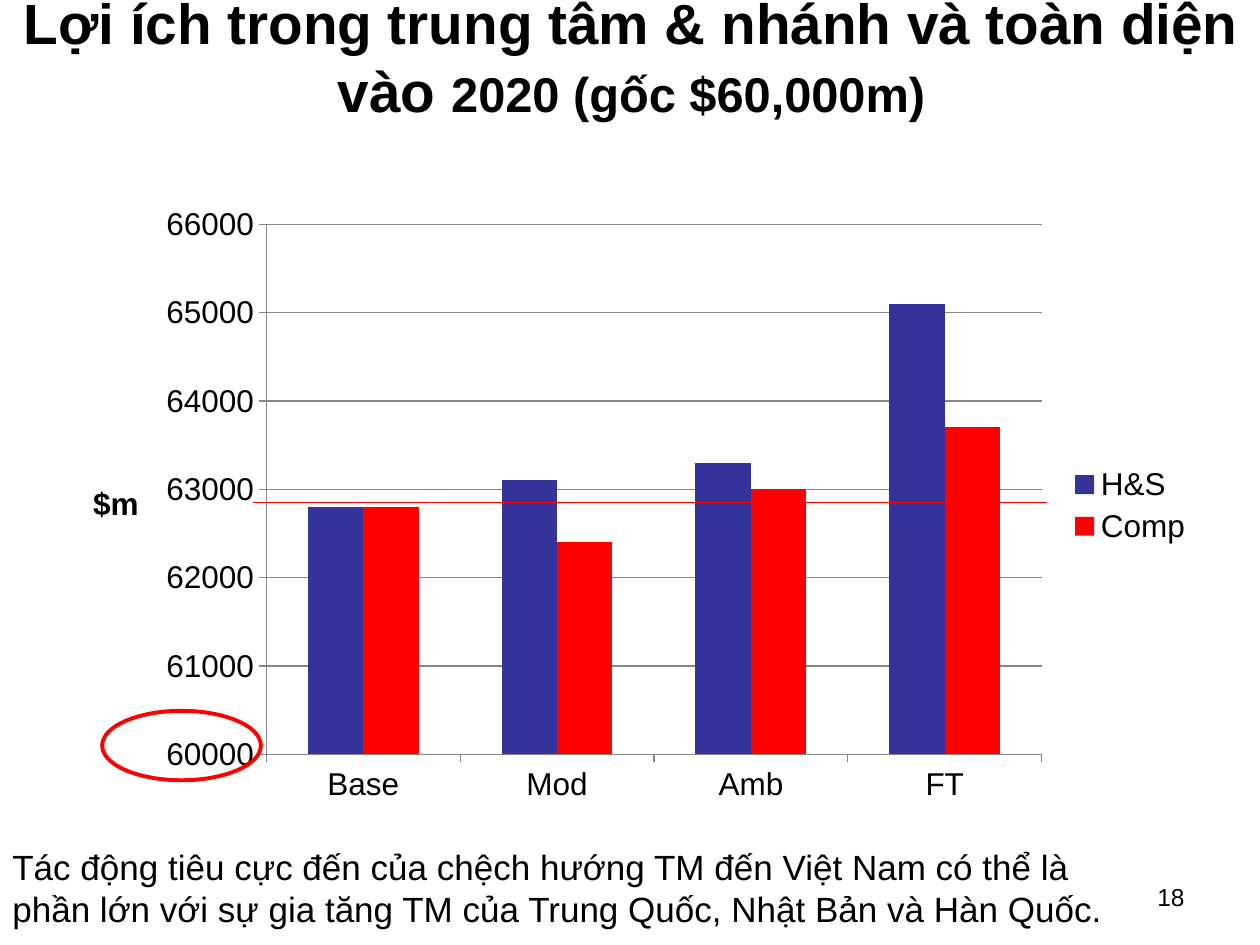
from lxml.etree import SubElement
from pptx import Presentation
from pptx.chart.data import CategoryChartData
from pptx.dml.color import RGBColor
from pptx.enum.chart import XL_CHART_TYPE as ChartType, XL_LEGEND_POSITION as LegendPosition
from pptx.enum.chart import XL_TICK_MARK as TickMark
from pptx.enum.shapes import MSO_CONNECTOR as Connector, MSO_SHAPE as Shape
from pptx.enum.text import PP_ALIGN as Align
from pptx.oxml import parse_xml
from pptx.oxml.ns import qn
from pptx.util import Cm, Pt

# Content
FONT = "Arial"
BLACK, RED, BLUE, GREY = "000000", "FF0000", "333399", "868686"
TITLE = [("Lợi ích trong trung tâm & nhánh và toàn diện vào ", 32.4),
         ("2020 (gốc $60,000m)", 27.9)]
NOTE = [("Tác động tiêu cực đến của chệch hướng TM đến Việt Nam có thể là "
         "phần lớn với sự gia tăng TM của Trung Quốc, Nhật Bản và Hàn Quốc.", 20)]
PAGE_NUMBER = [("18", 14)]
CATEGORIES = ["Base", "Mod", "Amb", "FT"]
SERIES = [("H&S", [62800, 63100, 63300, 65100], BLUE),
          ("Comp", [62800, 62400, 63000, 63700], RED)]
AXIS_TITLE = "$m"
AXIS_MIN, AXIS_MAX, AXIS_STEP = 60000, 66000, 1000

# Chart places in cm; the inner parts are measured from the chart's corner
CHART_PLACE = (1.3, 3.94, 23.01, 12.5)
PLOT_PLACE = {"x": 4.07, "y": 0.58, "w": 15.63, "h": 10.69}
AXIS_TITLE_PLACE = {"x": 0.46, "y": 5.67}


def color(value):
    return RGBColor.from_string(value)


def style_font(font, size, bold=False):
    font.name, font.size, font.bold = FONT, Pt(size), bold
    font.color.rgb = color(BLACK)


def style_line(line, value, width):
    line.color.rgb = color(value)
    line.width = Pt(width)


def add_text(page, spans, place, align=Align.LEFT, bold=False, inset=0.13):
    box = page.shapes.add_textbox(*map(Cm, place))
    frame = box.text_frame
    frame.word_wrap = True
    frame.margin_top = frame.margin_bottom = Cm(inset)
    para = frame.paragraphs[0]
    para.alignment = align
    for text, size in spans:
        span = para.add_run()
        span.text = text
        style_font(span.font, size, bold)


def set_layout(parent, index, place, **modes):
    """Fix a chart part's place as fractions of the chart."""
    layout = parent.find(qn("c:layout"))
    if layout is None:
        layout = parent.makeelement(qn("c:layout"))
        parent.insert(index, layout)
    manual = SubElement(layout, qn("c:manualLayout"))
    _, _, width, height = CHART_PLACE
    whole = {"x": width, "y": height, "w": width, "h": height}
    fractions = {name: length / whole[name] for name, length in place.items()}
    for name, value in {**modes, "xMode": "edge", "yMode": "edge", **fractions}.items():
        SubElement(manual, qn(f"c:{name}")).set("val", str(value))


def add_benefit_chart(page):
    data = CategoryChartData()
    data.categories = CATEGORIES
    for name, values, _ in SERIES:
        data.add_series(name, values)
    chart = page.shapes.add_chart(ChartType.COLUMN_CLUSTERED, *map(Cm, CHART_PLACE), data).chart
    style_font(chart.font, 18)
    chart.has_title = False
    chart.has_legend = True
    chart.legend.position = LegendPosition.RIGHT
    chart.legend.include_in_layout = False

    # Columns
    plot = chart.plots[0]
    plot.gap_width, plot.overlap, plot.vary_by_categories = 150, 0, False
    for series, (_, _, fill) in zip(plot.series, SERIES):
        series.format.fill.solid()
        series.format.fill.fore_color.rgb = color(fill)
        series.invert_if_negative = False

    # Axes
    scale = chart.value_axis
    scale.minimum_scale, scale.maximum_scale = AXIS_MIN, AXIS_MAX
    scale.major_unit = AXIS_STEP
    scale.tick_labels.number_format = "General"
    scale.tick_labels.number_format_is_linked = False
    style_line(scale.major_gridlines.format.line, GREY, 0.75)
    for axis in (scale, chart.category_axis):
        axis.major_tick_mark = TickMark.OUTSIDE
        style_line(axis.format.line, GREY, 0.75)

    # Upright axis title
    frame = scale.axis_title.text_frame
    span = frame.paragraphs[0].add_run()
    span.text = AXIS_TITLE
    style_font(span.font, 18, bold=True)
    body = frame._txBody.find(qn("a:bodyPr"))
    body.set("rot", "0")
    body.set("vert", "horz")

    set_layout(scale.axis_title._element, 1, AXIS_TITLE_PLACE)
    set_layout(chart._chartSpace.chart.plotArea, 0, PLOT_PLACE, layoutTarget="inner")


def add_base_line(page, left, right, top):
    line = page.shapes.add_connector(Connector.STRAIGHT, Cm(left), Cm(top), Cm(right), Cm(top))
    style_line(line.line, RED, 0.75)
    line._element.spPr.append(parse_xml(
        '<a:effectLst xmlns:a="http://schemas.openxmlformats.org/drawingml/2006/main"/>'))


def add_ring(page, place):
    ring = page.shapes.add_shape(Shape.OVAL, *map(Cm, place))
    ring.shadow.inherit = False
    ring.fill.background()
    style_line(ring.line, RED, 2.25)


def main():
    deck = Presentation()
    deck.slide_width, deck.slide_height = Cm(25.4), Cm(19.05)
    page = deck.slides.add_slide(deck.slide_layouts[6])

    add_text(page, TITLE, (0.03, -0.25, 25.4, 2.8), align=Align.CENTER, bold=True, inset=0)
    add_text(page, PAGE_NUMBER, (22.02, 17.65, 2.11, 1.02), align=Align.RIGHT)
    add_benefit_chart(page)
    add_base_line(page, 5.1, 21.1, 10.13)
    add_ring(page, (2.06, 14.33, 3.2, 1.4))
    add_text(page, NOTE, (0, 16.92, 22.91, 2.03))

    deck.save("out.pptx")


if __name__ == "__main__":
    main()
